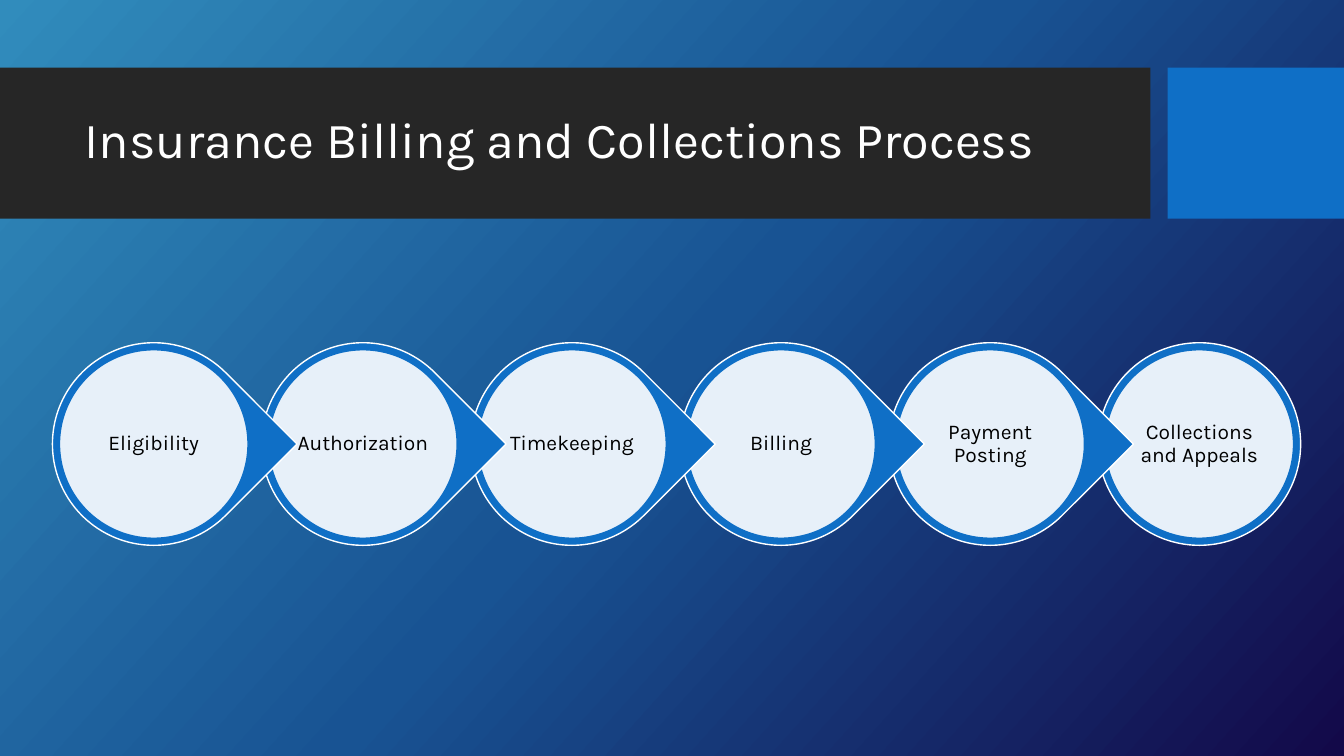
import copy

import pptx
import pptx.util
from lxml import etree
from pptx.dml.color import RGBColor
from pptx.enum.shapes import MSO_SHAPE
from pptx.enum.text import MSO_ANCHOR, MSO_AUTO_SIZE, PP_ALIGN
from pptx.oxml.ns import qn

W, H = 13.33, 7.5
FONT = "Karla"
WHITE = RGBColor(0xFF, 0xFF, 0xFF)
BLACK = RGBColor(0x00, 0x00, 0x00)
CHARCOAL = RGBColor(0x26, 0x26, 0x26)
BLUE = RGBColor(0x0F, 0x6F, 0xC6)
GRADIENT = [
    (0, RGBColor(0x31, 0x8C, 0xBC)),
    (0.5, RGBColor(0x18, 0x53, 0x93)),
    (1, RGBColor(0x13, 0x09, 0x49)),
]
STEPS = ["Eligibility", "Authorization", "Timekeeping", "Billing",
         "Payment Posting", "Collections and Appeals"]


def inches(*lengths):
    """Convert lengths in inches to slide units."""
    return [pptx.util.Inches(length) for length in lengths]


def write(tf, text, size, color, align=PP_ALIGN.LEFT, inset=None):
    """Write one formatted paragraph, centred vertically in its frame."""
    tf.word_wrap = True
    tf.auto_size = MSO_AUTO_SIZE.NONE
    tf.vertical_anchor = MSO_ANCHOR.MIDDLE
    if inset is not None:
        tf.margin_left = tf.margin_right = pptx.util.Inches(inset)
        tf.margin_top = tf.margin_bottom = pptx.util.Inches(inset)
    p = tf.paragraphs[0]
    p.alignment = align
    p.line_spacing = 0.9
    r = p.add_run()
    r.text = text
    r.font.name = FONT
    r.font.size = pptx.util.Pt(size)
    r.font.color.rgb = color


def add_figure(shapes, kind, box, fill, line=None, opacity=None):
    """Add a flat preset shape with an optional outline and opacity."""
    sp = shapes.add_shape(kind, *inches(*box))
    sp.shadow.inherit = False
    sp.fill.solid()
    sp.fill.fore_color.rgb = fill
    if line is None:
        sp.line.fill.background()
    else:
        sp.line.color.rgb = line
        sp.line.width = pptx.util.Pt(1)
    if opacity is not None:
        clr = sp._element.spPr.find(qn("a:solidFill")).find(qn("a:srgbClr"))
        etree.SubElement(clr, qn("a:alpha")).set("val", str(opacity * 1000))
    return sp


def paint_background(s):
    """Fill the slide with a diagonal three-colour gradient."""
    fill = s.background.fill
    fill.gradient()
    fill.gradient_angle = 360 - 42
    stops = s._element.find(".//" + qn("a:gsLst"))
    stops.append(copy.deepcopy(stops[-1]))
    for stop, (position, color) in zip(fill.gradient_stops, GRADIENT):
        stop.position = position
        stop.color.rgb = color


def add_header(s, box, text):
    """Place the title on a dark band with a blue block at its right."""
    x, y, w, h = box
    band, block = 11.41, 1.75
    add_figure(s.shapes, MSO_SHAPE.RECTANGLE, (x, y, band, h), CHARCOAL)
    add_figure(s.shapes, MSO_SHAPE.RECTANGLE, (x + w - block, y, block, h), BLUE)
    title = s.shapes.title
    title.left, title.top, title.width, title.height = inches(
        x + 0.74, y + 0.15, 10.51, 1.18)
    write(title.text_frame, text, 36, WHITE)
    s.shapes._spTree.append(title._element)


def add_step(shapes, box, text, last):
    """Draw a pointed ring, its pale disc and its label."""
    x, y, size, _ = box
    kind = MSO_SHAPE.OVAL if last else MSO_SHAPE.TEAR
    ring = add_figure(shapes, kind, box, BLUE, WHITE)
    if not last:
        ring.rotation = 45
    rim, pad = 0.07, size / 6
    disc = (x + rim, y + rim, size - 2 * rim, size - 2 * rim)
    add_figure(shapes, MSO_SHAPE.OVAL, disc, WHITE, BLUE, opacity=90)
    label = shapes.add_textbox(
        *inches(x + pad, y + pad, size - 2 * pad, size - 2 * pad))
    write(label.text_frame, text, 15, BLACK, PP_ALIGN.CENTER, inset=0.02)


def add_chain(s, box, steps):
    """Spread the steps evenly, each pointing over the next one."""
    x, y, w, size = box
    pitch = (w - size) / (len(steps) - 1)
    group = s.shapes.add_group_shape()
    for i, text in reversed(list(enumerate(steps))):
        add_step(group.shapes, (x + i * pitch, y, size, size), text,
                 last=i == len(steps) - 1)


def main():
    """Build and save the slide."""
    prs = pptx.Presentation()
    prs.slide_width, prs.slide_height = inches(W, H)
    s = prs.slides.add_slide(prs.slide_layouts[5])
    paint_background(s)
    add_header(s, (0, 0.67, W, 1.5), "Insurance Billing and Collections Process")
    add_chain(s, (0.52, 3.4, 12.38, 2.01), STEPS)
    prs.save("out.pptx")


if __name__ == "__main__":
    main()
